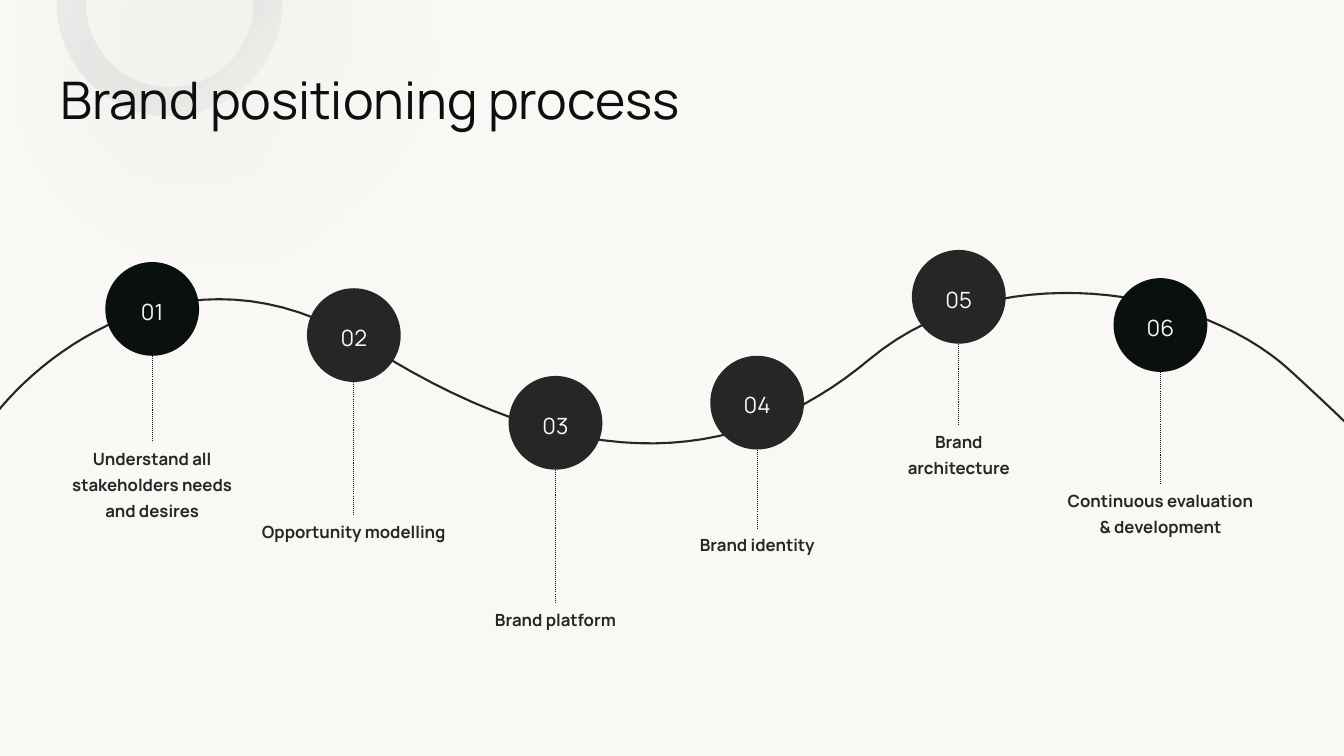
from lxml import etree
from pptx import Presentation
from pptx.dml.color import RGBColor
from pptx.enum.dml import MSO_LINE
from pptx.enum.shapes import MSO_CONNECTOR, MSO_SHAPE
from pptx.enum.text import MSO_ANCHOR, PP_ALIGN
from pptx.oxml import parse_xml
from pptx.oxml.ns import nsdecls, qn
from pptx.util import Inches, Pt

INK, GREY, PAPER = "09100F", "262626", "F9F8F5"
DISC = 0.93
FIRST_CENTRE, STEP_GAP = 1.51, 2

# label, disc colour, disc top, label top, label width, label height
STEPS = [
    ("Understand all stakeholders needs and desires", INK, 2.6, 4.39, 1.66, 0.73),
    ("Opportunity modelling", GREY, 2.86, 5.12, 1.84, 0.46),
    ("Brand platform", GREY, 3.73, 5.99, 1.66, 0.2),
    ("Brand identity", GREY, 3.53, 5.25, 1.66, 0.2),
    ("Brand architecture", GREY, 2.48, 4.22, 1.38, 0.46),
    ("Continuous evaluation & development", INK, 2.76, 4.81, 1.98, 0.46),
]

WAVE_START = (-0.1, 4.18)
# two control points and the end point of each Bézier piece
WAVE_PIECES = [
    ((0.42, 3.47), (1.91, 2.32), (3.65, 3.43)),
    ((5.82, 4.81), (7.4, 4.59), (8.63, 3.56)),
    ((9.87, 2.53), (11.88, 2.83), (12.8, 3.68)),
    ((13.54, 4.36), (13.64, 4.49), (13.61, 4.47)),
]


def colour(code):
    return RGBColor.from_string(code)


def bezier_points(start, pieces, count=30):
    """Return points along a chain of cubic Bézier pieces."""
    points = []
    for first, second, end in pieces:
        for i in range(1, count + 1):
            t = i / count
            u = 1 - t
            points.append(tuple(
                u**3 * a + 3 * u * u * t * b + 3 * u * t * t * c + t**3 * d
                for a, b, c, d in zip(start, first, second, end)))
        start = end
    return points


class Deck:
    """Holds the shared style and the current slide."""

    font = "Manrope"

    def __init__(self):
        self.prs = Presentation()
        self.prs.slide_width, self.prs.slide_height = Inches(13.33), Inches(7.5)
        self.slide = self.prs.slides.add_slide(self.prs.slide_layouts[6])
        self.shapes = self.slide.shapes
        background = self.slide.background.fill
        background.solid()
        background.fore_color.rgb = colour(PAPER)

    def set_words(self, frame, words, size, ink, spacing=1.0, bold=False,
                  align=PP_ALIGN.CENTER):
        frame.word_wrap = True
        paragraph = frame.paragraphs[0]
        paragraph.alignment = align
        paragraph.line_spacing = spacing
        run = paragraph.add_run()
        run.text = words
        run.font.name, run.font.size, run.font.bold = self.font, Pt(size), bold
        run.font.color.rgb = colour(ink)

    def text(self, words, left, top, width, height, size, ink, **style):
        box = self.shapes.add_textbox(*map(Inches, (left, top, width, height)))
        frame = box.text_frame
        frame.margin_left = frame.margin_right = 0
        frame.margin_top = frame.margin_bottom = 0
        self.set_words(frame, words, size, ink, **style)

    def disc(self, number, left, top, fill):
        disc = self.shapes.add_shape(
            MSO_SHAPE.OVAL, *map(Inches, (left, top, DISC, DISC)))
        disc.shadow.inherit = False
        disc.fill.solid()
        disc.fill.fore_color.rgb = colour(fill)
        disc.line.fill.background()
        disc.text_frame.vertical_anchor = MSO_ANCHOR.MIDDLE
        self.set_words(disc.text_frame, number, 16, PAPER, spacing=1.17)

    def dotted_line(self, x, top, bottom):
        line = self.shapes.add_connector(
            MSO_CONNECTOR.STRAIGHT, *map(Inches, (x, top, x, bottom)))
        line.line.color.rgb = colour(INK)
        line.line.width = Pt(0.75)
        line.line.dash_style = MSO_LINE.ROUND_DOT
        etree.SubElement(line._element.spPr, qn("a:effectLst"))

    def curve(self, start, pieces):
        builder = self.shapes.build_freeform(*map(Inches, start))
        builder.add_line_segments(
            [(Inches(x), Inches(y)) for x, y in bezier_points(start, pieces)],
            close=False)
        wave = builder.convert_to_shape()
        wave.shadow.inherit = False
        wave.fill.background()
        wave.line.color.rgb = colour(GREY)
        wave.line.width = Pt(1.5)

    def faded_ring(self, left, top, size):
        ring = self.shapes.add_shape(
            MSO_SHAPE.DONUT, *map(Inches, (left, top, size, size)))
        ring.adjustments[0] = 0.129
        ring.line.fill.background()
        ring.shadow.inherit = False
        stops = "".join(
            f'<a:gs pos="{at * 1000}"><a:srgbClr val="{code}">'
            f'<a:alpha val="{alpha * 1000}"/></a:srgbClr></a:gs>'
            for at, code, alpha in [(0, "EEEEEE", 41), (2, "EEEEEE", 41),
                                    (100, "7F7F7F", 0)])
        properties = ring._element.spPr
        properties.find(qn("a:ln")).addprevious(parse_xml(
            f'<a:gradFill {nsdecls("a")}><a:gsLst>{stops}</a:gsLst>'
            '<a:lin ang="2700000" scaled="0"/></a:gradFill>'))
        properties.find(qn("a:effectLst")).append(parse_xml(
            f'<a:outerShdw {nsdecls("a")} blurRad="{Pt(100)}" dist="{Pt(65)}" '
            'dir="2700000" algn="tl" rotWithShape="0"><a:srgbClr val="000000">'
            '<a:alpha val="40000"/></a:srgbClr></a:outerShdw>'))


def main():
    deck = Deck()
    deck.curve(WAVE_START, WAVE_PIECES)
    for i, (label, fill, disc_top, label_top, width, height) in enumerate(STEPS):
        centre = FIRST_CENTRE + i * STEP_GAP
        deck.disc(f"{i + 1:02}", centre - DISC / 2, disc_top, fill)
        deck.dotted_line(centre, disc_top + DISC, label_top)
        deck.text(label, centre - width / 2, label_top, width, height, 12, GREY,
                  spacing=1.3, bold=True)
    deck.faded_ring(0.57, -1.07, 2.22)
    deck.text("Brand positioning process", 0.6, 0.67, 12.3, 0.68, 37, INK,
              align=PP_ALIGN.LEFT)
    deck.prs.save("out.pptx")


if __name__ == "__main__":
    main()
